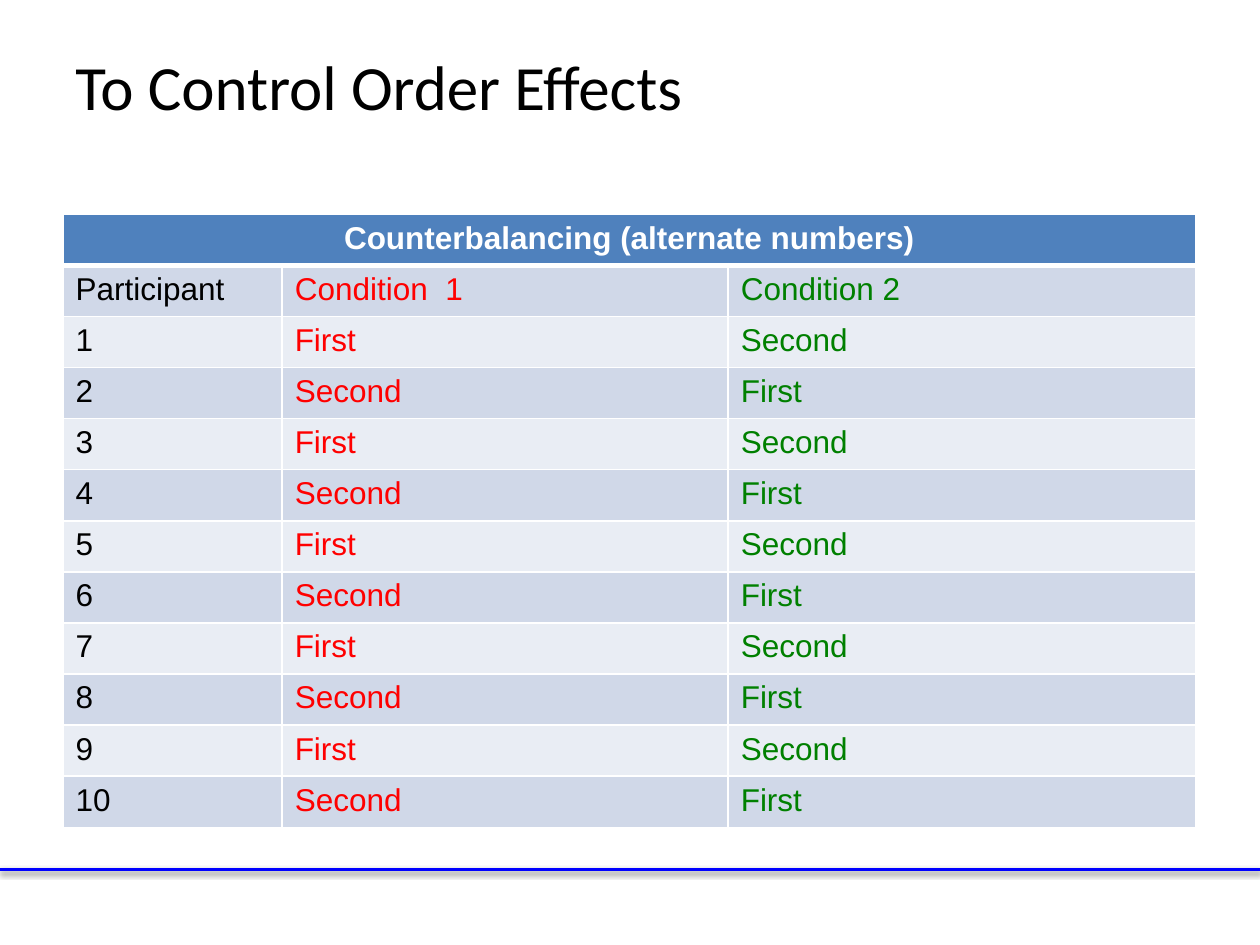
"""Build a slide with a counterbalancing table for controlling order effects."""
from lxml import etree
from pptx import Presentation
from pptx.dml.color import RGBColor
from pptx.enum import shapes, text
from pptx.oxml import ns, parse_xml
from pptx.util import Inches, Pt

BLACK = RGBColor(0x00, 0x00, 0x00)
WHITE = RGBColor(0xFF, 0xFF, 0xFF)
RED = RGBColor(0xFF, 0x00, 0x00)
GREEN = RGBColor(0x00, 0x80, 0x00)
BLUE = RGBColor(0x00, 0x00, 0xFF)
HEADER_FILL = RGBColor(0x4F, 0x81, 0xBD)
DARK_BAND = RGBColor(0xD0, 0xD8, 0xE8)
LIGHT_BAND = RGBColor(0xE9, 0xED, 0xF4)


def write(frame, words, size=18, font="Arial", color=BLACK, bold=False,
          align=text.PP_ALIGN.LEFT):
    para = frame.paragraphs[0]
    para.alignment = align
    span = para.add_run()
    span.text = words
    span.font.size = Pt(size)
    span.font.name = font
    span.font.color.rgb = color
    span.font.bold = bold


def set_borders(cell, top=1, bottom=1):
    properties = cell._tc.get_or_add_tcPr()
    for side, width in (("L", 1), ("R", 1), ("T", top), ("B", bottom)):
        border = etree.SubElement(properties, ns.qn(f"a:ln{side}"), w=str(Pt(width)))
        fill = etree.SubElement(border, ns.qn("a:solidFill"))
        etree.SubElement(fill, ns.qn("a:srgbClr"), val=str(WHITE))


deck = Presentation()
deck.slide_width = Inches(10)
deck.slide_height = Inches(7.5)
page = deck.slides.add_slide(deck.slide_layouts[6])

footer_line = page.shapes.add_connector(
    shapes.MSO_CONNECTOR.STRAIGHT, Inches(0), Inches(6.9), Inches(10), Inches(6.9))
footer_line.line.color.rgb = BLUE
footer_line.line.width = Pt(2)
footer_line._element.spPr.append(parse_xml(
    f'<a:effectLst {ns.nsdecls("a")}>'
    f'<a:outerShdw blurRad="{Pt(3.1)}" dist="{Pt(1.6)}" dir="5400000" rotWithShape="0">'
    '<a:srgbClr val="000000"><a:alpha val="38000"/></a:srgbClr>'
    '</a:outerShdw></a:effectLst>'))

title_box = page.shapes.add_textbox(Inches(0.5), Inches(0.16), Inches(9), Inches(1.03))
title_box.text_frame.word_wrap = True
title_box.text_frame.vertical_anchor = text.MSO_ANCHOR.MIDDLE
write(title_box.text_frame, "To Control Order Effects", size=36, font="Calibri")

rows = [("Participant", "Condition  1", "Condition 2")]
for number in range(1, 11):
    order = ("First", "Second") if number % 2 else ("Second", "First")
    rows.append((str(number), *order))

table = page.shapes.add_table(
    len(rows) + 1, 3, Inches(0.5), Inches(1.7), Inches(9), Inches(4.87)).table
for column, width in zip(table.columns, (1.74, 3.54, 3.71)):
    column.width = Inches(width)

header = table.cell(0, 0)
header.merge(table.cell(0, 2))
for cell in table.rows[0].cells:
    set_borders(cell, bottom=3)
    cell.fill.solid()
    cell.fill.fore_color.rgb = HEADER_FILL
write(header.text_frame, "Counterbalancing (alternate numbers)", color=WHITE,
      bold=True, align=text.PP_ALIGN.CENTER)

for index, row in enumerate(rows, start=1):
    for column, (words, color) in enumerate(zip(row, (BLACK, RED, GREEN))):
        cell = table.cell(index, column)
        set_borders(cell, top=3 if index == 1 else 1)
        cell.fill.solid()
        cell.fill.fore_color.rgb = DARK_BAND if index % 2 else LIGHT_BAND
        write(cell.text_frame, words, color=color)

deck.save("out.pptx")
